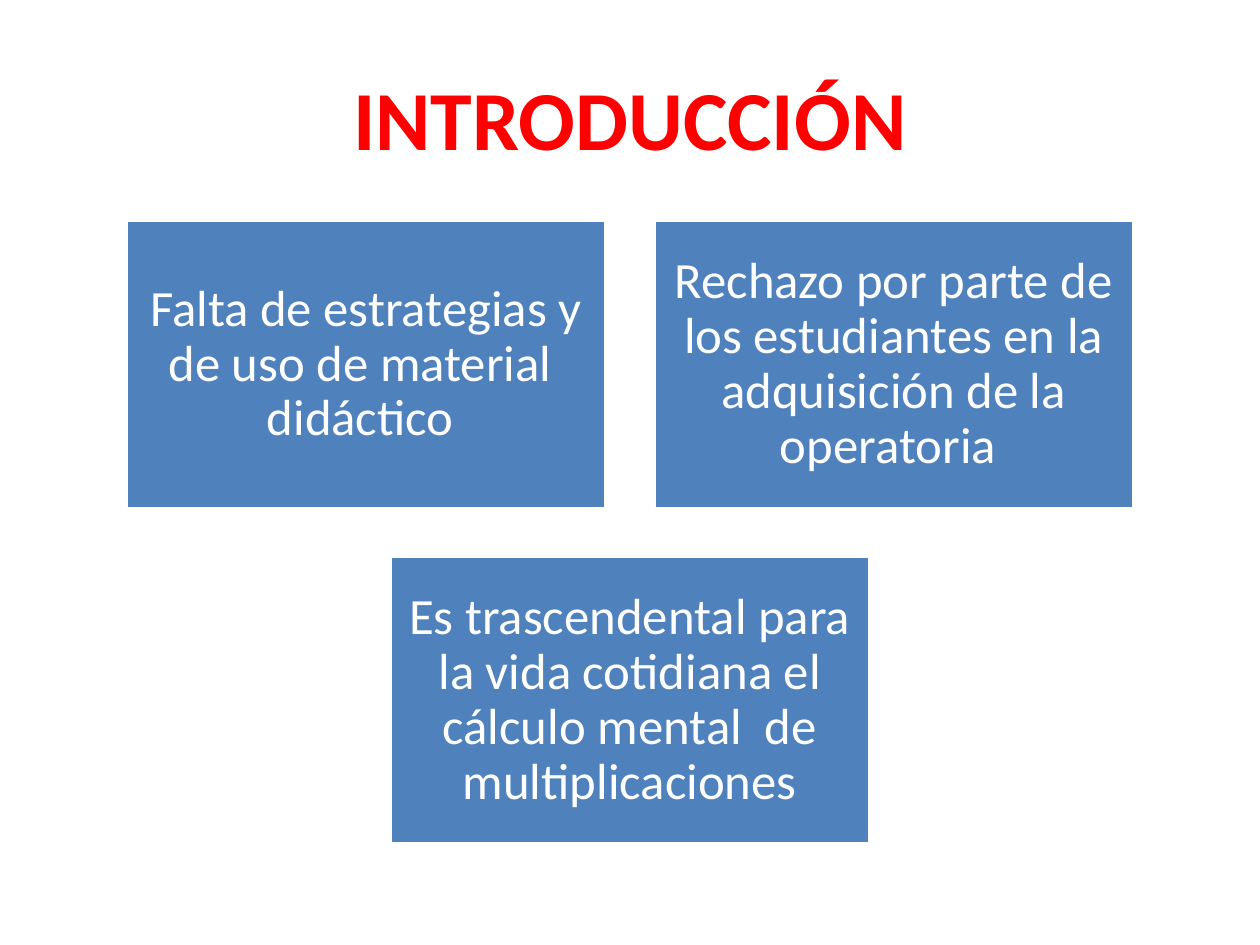
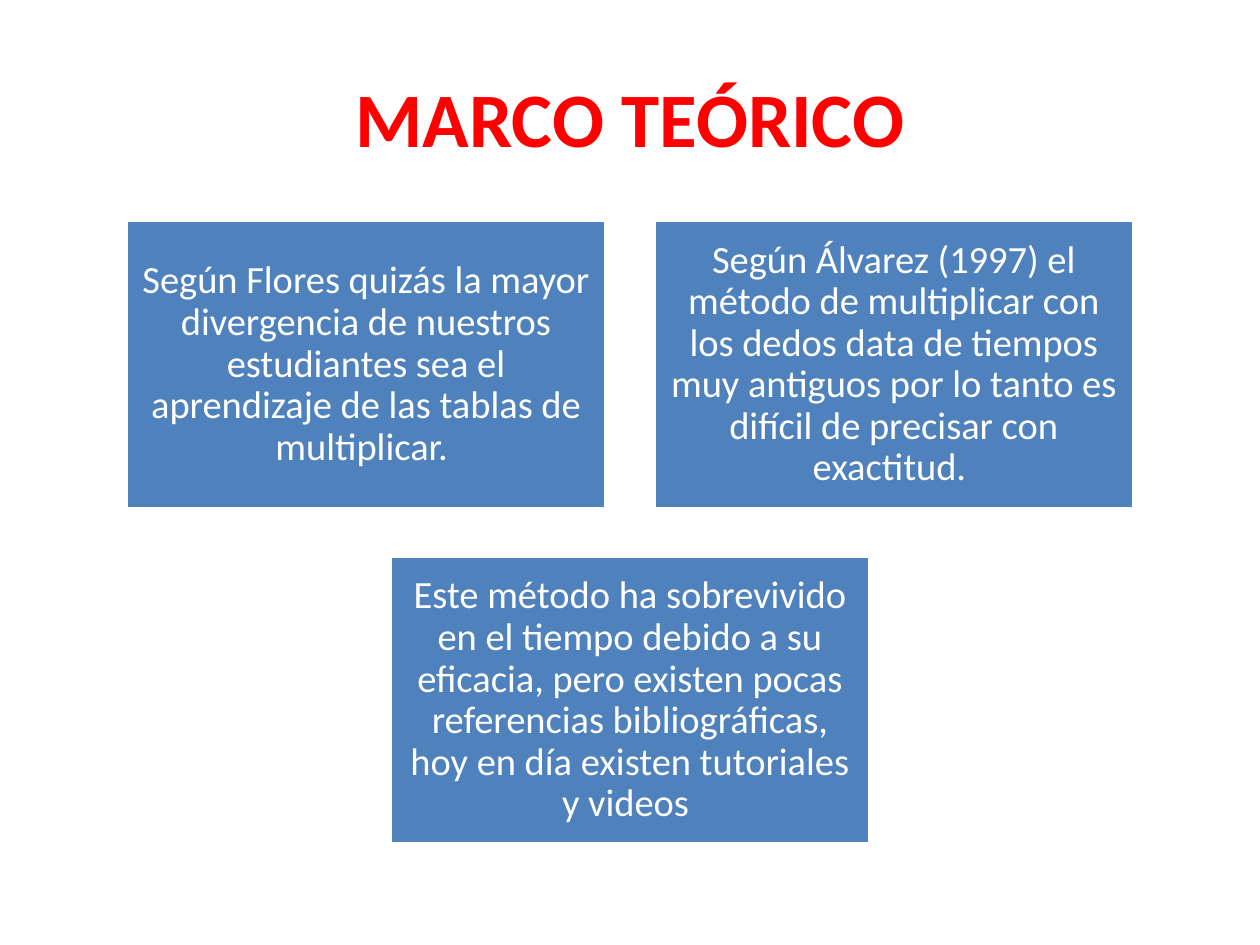
from pptx import Presentation
from pptx.dml.color import RGBColor
from pptx.enum.shapes import MSO_SHAPE as Shape
from pptx.enum.text import MSO_ANCHOR as Anchor, MSO_AUTO_SIZE as AutoSize, PP_ALIGN as Align
from pptx.util import Cm, Pt

SLIDES = [
    {
        "title": "INTRODUCCIÓN", "title_size": 48, "text_size": 29, "inset": 0.3,
        "boxes": [
            "Falta de estrategias y de uso de material  didáctico ",
            "Rechazo por parte de los estudiantes en la adquisición de la operatoria ",
            "Es trascendental para la vida cotidiana el cálculo mental  de multiplicaciones",
        ],
    },
    {
        "title": "MARCO TEÓRICO", "title_size": 44, "text_size": 22, "inset": 0.23,
        "boxes": [
            "Según Flores quizás la mayor divergencia de nuestros estudiantes sea el "
            "aprendizaje de las tablas de multiplicar. ",
            "Según Álvarez (1997) el método de multiplicar con los dedos data de tiempos "
            "muy antiguos por lo tanto es difícil de precisar con exactitud. ",
            "Este método ha sobrevivido en el tiempo debido a su eficacia, pero existen "
            "pocas referencias bibliográficas, hoy en día existen tutoriales y videos ",
        ],
    },
]

FONT = "Calibri"
RED, BLUE, WHITE = "FF0000", "4F81BD", "FFFFFF"
SLIDE_WIDTH, SLIDE_HEIGHT = 25.4, 19.05
TITLE_AREA = (1.27, 0.76, 22.86, 3.18)
BOX_WIDTH, BOX_HEIGHT, GAP = 9.67, 5.8, 0.97
GRID_TOP, COLUMNS = 4.45, 2


def color(value):
    """Turn a hex string into a colour."""
    return RGBColor.from_string(value)


def write(shape, text, *, size, fill, bold=False, inset=0.25, line_spacing=1.0):
    """Put one centred paragraph into a shape."""
    frame = shape.text_frame
    frame.text = text
    frame.word_wrap = True
    frame.auto_size = AutoSize.NONE
    frame.vertical_anchor = Anchor.MIDDLE
    frame.margin_left = frame.margin_right = Cm(inset)
    frame.margin_top = frame.margin_bottom = Cm(inset)
    paragraph = frame.paragraphs[0]
    paragraph.alignment = Align.CENTER
    paragraph.line_spacing = line_spacing
    font = paragraph.runs[0].font
    font.name, font.size, font.bold = FONT, Pt(size), bold
    font.color.rgb = color(fill)


def box_positions(count):
    """Yield left and top of each box, with every row centred on the slide."""
    for index in range(count):
        row, column = divmod(index, COLUMNS)
        in_row = min(COLUMNS, count - row * COLUMNS)
        row_width = in_row * BOX_WIDTH + (in_row - 1) * GAP
        left = (SLIDE_WIDTH - row_width) / 2 + column * (BOX_WIDTH + GAP)
        yield left, GRID_TOP + row * (BOX_HEIGHT + GAP)


def add_slide(presentation, content):
    """Add a slide with a red title and a grid of text boxes."""
    slide = presentation.slides.add_slide(presentation.slide_layouts[5])
    title = slide.shapes.title
    title.left, title.top, title.width, title.height = map(Cm, TITLE_AREA)
    write(title, content["title"], size=content["title_size"], fill=RED, bold=True)
    boxes = content["boxes"]
    for text, (left, top) in zip(boxes, box_positions(len(boxes))):
        box = slide.shapes.add_shape(
            Shape.RECTANGLE, Cm(left), Cm(top), Cm(BOX_WIDTH), Cm(BOX_HEIGHT))
        box.shadow.inherit = False
        box.fill.solid()
        box.fill.fore_color.rgb = color(BLUE)
        box.line.color.rgb = color(WHITE)
        box.line.width = Pt(2)
        write(box, text, size=content["text_size"], fill=WHITE,
              inset=content["inset"], line_spacing=0.9)


def main():
    """Build and save the presentation."""
    presentation = Presentation()
    presentation.slide_width, presentation.slide_height = Cm(SLIDE_WIDTH), Cm(SLIDE_HEIGHT)
    for content in SLIDES:
        add_slide(presentation, content)
    presentation.save("out.pptx")


if __name__ == "__main__":
    main()
